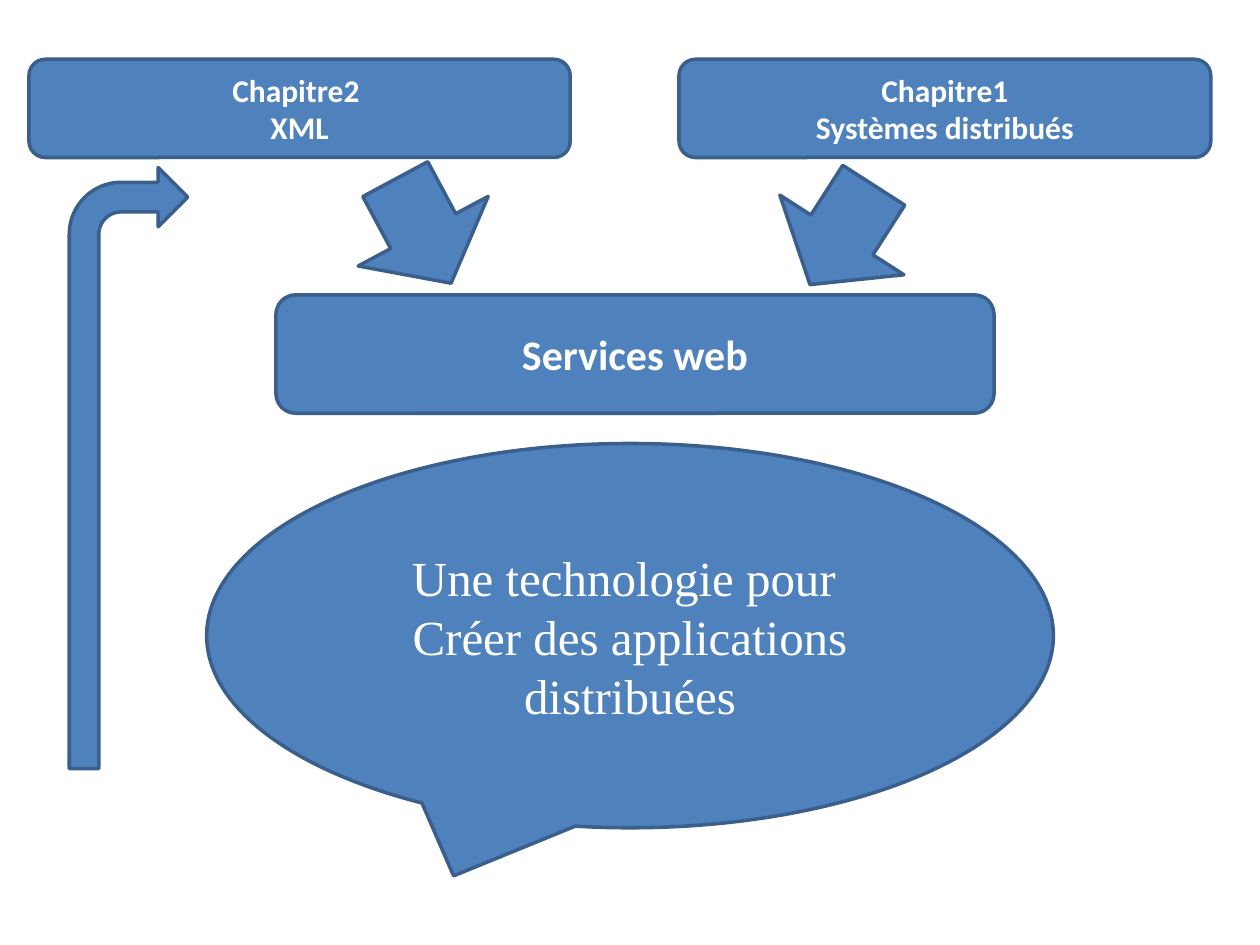
from pptx import Presentation
from pptx.dml.color import RGBColor
from pptx.enum.shapes import MSO_SHAPE
from pptx.enum.text import MSO_ANCHOR, PP_ALIGN
from pptx.util import Inches, Pt

SLIDE_W, SLIDE_H = 10, 7.5
BLUE, OUTLINE, WHITE = "4F81BD", "3A5F8C", "FFFFFF"

CHAPTER_TEXT = {"name": "Calibri", "size": Pt(18), "bold": True}
TOPIC_TEXT = {"name": "Calibri", "size": Pt(24), "bold": True}
SPEECH_TEXT = {"name": "Times New Roman", "size": Pt(28), "bold": False}


def color(hex_code):
    return RGBColor.from_string(hex_code)


def add_block(slide, preset, box, rotation=0):
    """Add a blue outlined shape; box is left, top, width, height in inches."""
    block = slide.shapes.add_shape(preset, *(Inches(length) for length in box))
    block.rotation = rotation
    block.shadow.inherit = False
    block.fill.solid()
    block.fill.fore_color.rgb = color(BLUE)
    block.line.color.rgb = color(OUTLINE)
    block.line.width = Pt(2)
    return block


def write_lines(block, lines, text_format):
    frame = block.text_frame
    frame.word_wrap = True
    frame.vertical_anchor = MSO_ANCHOR.MIDDLE
    for index, line in enumerate(lines):
        paragraph = frame.add_paragraph() if index else frame.paragraphs[0]
        paragraph.alignment = PP_ALIGN.CENTER
        run = paragraph.add_run()
        run.text = line
        run.font.color.rgb = color(WHITE)
        for attribute, value in text_format.items():
            setattr(run.font, attribute, value)


def add_chapters(slide, box):
    """Place the two chapters at the left and right ends of the box."""
    left, top, width, height = box
    xml_width, systems_width = 0.458 * width, 0.45 * width
    chapters = [
        (left + width - systems_width, systems_width, ["Chapitre1", "Systèmes distribués"]),
        (left, xml_width, ["Chapitre2 ", "XML"]),
    ]
    for chapter_left, chapter_width, lines in chapters:
        chapter = add_block(slide, MSO_SHAPE.ROUNDED_RECTANGLE,
                            (chapter_left, top, chapter_width, height))
        write_lines(chapter, lines, CHAPTER_TEXT)


def add_topic(slide, box):
    topic = add_block(slide, MSO_SHAPE.ROUNDED_RECTANGLE, box)
    write_lines(topic, ["Services web"], TOPIC_TEXT)


def add_converging_arrows(slide, box):
    """Point one arrow from each end of the box down to the topic."""
    left, top, width, height = box
    arrow_width, arrow_height = 0.22 * width, 0.975 * height
    drop = height - arrow_height
    for x, y, angle in [(left, top, 61.8),
                        (left + width - arrow_width, top + drop, 122.7)]:
        add_block(slide, MSO_SHAPE.RIGHT_ARROW,
                  (x, y, arrow_width, arrow_height), angle)


def add_speech(slide, box):
    speech = add_block(slide, MSO_SHAPE.OVAL_CALLOUT, box)
    write_lines(speech, ["Une technologie pour ", "Créer des applications distribuées"],
                SPEECH_TEXT)


def add_return_arrow(slide, box):
    add_block(slide, MSO_SHAPE.BENT_ARROW, box)


def main():
    deck = Presentation()
    deck.slide_width, deck.slide_height = Inches(SLIDE_W), Inches(SLIDE_H)
    slide = deck.slides.add_slide(deck.slide_layouts[6])

    add_chapters(slide, (0.23, 0.47, 9.38, 0.78))
    add_topic(slide, (2.19, 2.34, 5.7, 0.94))
    add_converging_arrows(slide, (2.89, 1.25, 4.26, 1.2))
    speech_width = 6.72
    add_speech(slide, ((SLIDE_W - speech_width) / 2, 3.52, speech_width, 3.05))
    add_return_arrow(slide, (0.55, 1.33, 0.94, 4.77))

    deck.save("out.pptx")


if __name__ == "__main__":
    main()
